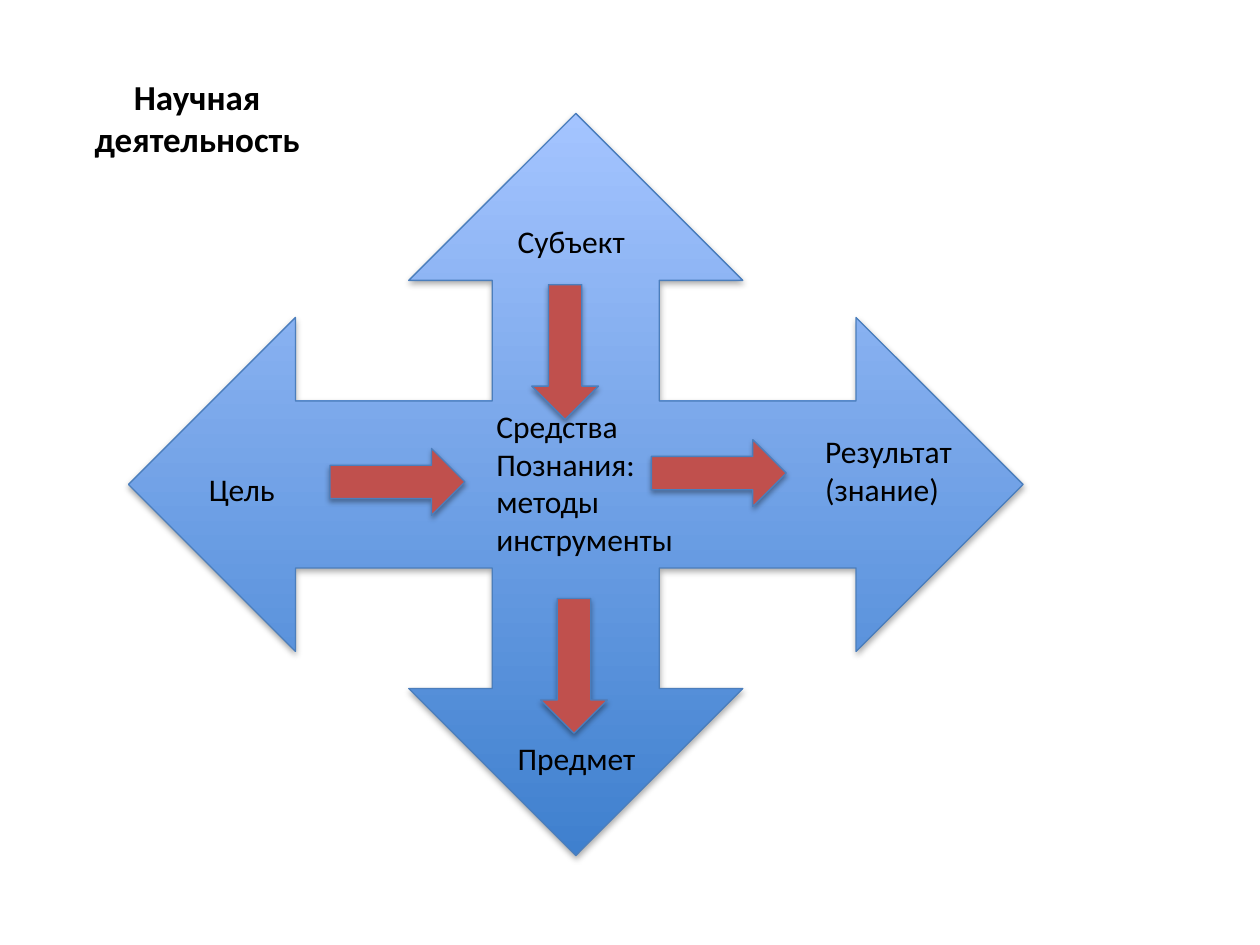
from pptx import Presentation
from pptx.dml.color import RGBColor
from pptx.enum.shapes import MSO_SHAPE
from pptx.enum.text import MSO_ANCHOR, MSO_AUTO_SIZE, PP_ALIGN
from pptx.util import Inches, Pt

QUAD_ARROW = MSO_SHAPE.QUAD_ARROW
RIGHT_ARROW = MSO_SHAPE.RIGHT_ARROW
TOP = MSO_ANCHOR.TOP
FIT_SHAPE = MSO_AUTO_SIZE.SHAPE_TO_FIT_TEXT
CENTER, LEFT = PP_ALIGN.CENTER, PP_ALIGN.LEFT

BLACK = RGBColor(0x00, 0x00, 0x00)
DARK_BLUE = RGBColor(0x3F, 0x80, 0xCE)
LIGHT_BLUE = RGBColor(0xA4, 0xC4, 0xFF)
OUTLINE = RGBColor(0x4B, 0x7E, 0xBC)
RED = RGBColor(0xC0, 0x50, 0x4D)


def write_lines(sp, lines, size, bold=False, align=LEFT):
    tf = sp.text_frame
    tf.word_wrap = False
    tf.auto_size = FIT_SHAPE
    tf.vertical_anchor = TOP
    tf.text = "\n".join(lines)
    for p in tf.paragraphs:
        p.alignment = align
        p.font.name = "Calibri"
        p.font.size = Pt(size)
        p.font.bold = bold
        p.font.color.rgb = BLACK


def add_arrow(shape_type, left, top, width, height):
    """Add an outlined arrow that keeps the theme's soft shadow."""
    sp = s.shapes.add_shape(shape_type, Inches(left), Inches(top),
                            Inches(width), Inches(height))
    sp.line.color.rgb = OUTLINE
    sp.line.width = Pt(0.75)
    return sp


prs = Presentation()
prs.slide_width, prs.slide_height = Inches(10), Inches(7.5)
s = prs.slides.add_slide(prs.slide_layouts[5])

# Four-way arrow, light at the top and dark at the bottom
cross = add_arrow(QUAD_ARROW, 1.02, 0.9, 7.1, 5.89)
cross.fill.gradient()
cross.fill.gradient_angle = 90
for stop, color in zip(cross.fill.gradient_stops, (DARK_BLUE, LIGHT_BLUE)):
    stop.color.rgb = color
cross.fill.gradient_stops[0].position = 0
cross.fill.gradient_stops[1].position = 1

title = s.shapes.title
title.left, title.top = Inches(0.64), Inches(0.55)
title.width, title.height = Inches(1.85), Inches(0.77)
write_lines(title, ["Научная", "деятельность"], 20, bold=True, align=CENTER)

# Labels: left, top, width, height, lines
labels = [
    (1.56, 3.68, 0.74, 0.4, ["Цель"]),
    (3.84, 3.18, 1.62, 1.31,
     ["Средства", "Познания:", "методы", "инструменты"]),
    (4.01, 5.82, 1.16, 0.4, ["Предмет"]),
    (4.01, 1.71, 1.06, 0.4, ["Субъект"]),
    (6.45, 3.38, 1.24, 0.71, ["Результат", "(знание)"]),
]
for left, top, width, height, lines in labels:
    sp = s.shapes.add_textbox(Inches(left), Inches(top),
                              Inches(width), Inches(height))
    write_lines(sp, lines, 18)

# Red arrows: left, top, rotation
for left, top, rotation in [(2.62, 3.56, 0), (3.95, 2.53, 90),
                            (5.17, 3.49, 0), (4.02, 5.02, 90)]:
    sp = add_arrow(RIGHT_ARROW, left, top, 1.07, 0.53)
    sp.rotation = rotation
    sp.fill.solid()
    sp.fill.fore_color.rgb = RED

prs.save("out.pptx")
